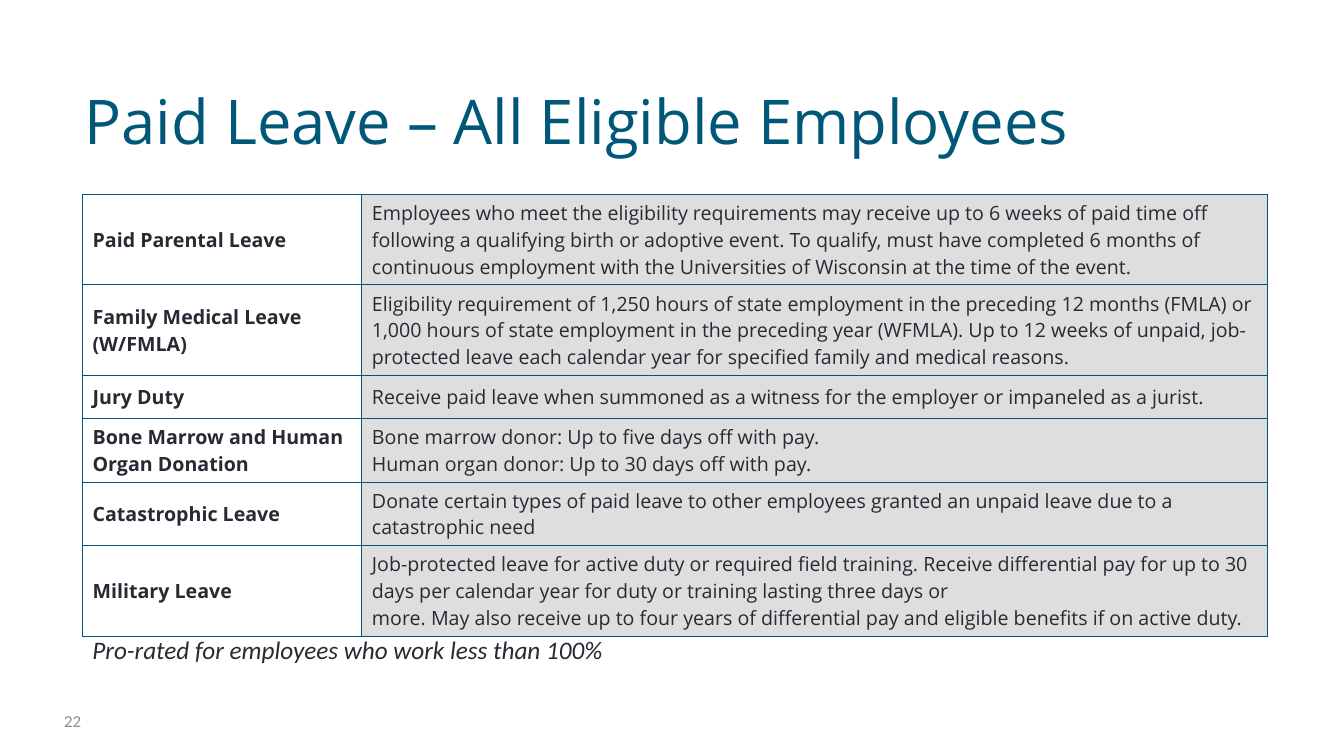
from lxml import etree
from pptx import Presentation
from pptx.dml.color import RGBColor
from pptx.enum import text as t
from pptx.oxml import ns
from pptx.util import Cm, Pt

TEAL, INK, PALE, MUTED = "005777", "292934", "DEDEDE", "8E8E90"

# name of the leave, its paragraphs, row height in cm
LEAVES = [
    ("Paid Parental Leave",
     ["Employees who meet the eligibility requirements may receive up to 6 weeks of paid time off "
      "following a qualifying birth or adoptive event. To qualify, must have completed 6 months of "
      "continuous employment with the Universities of Wisconsin at the time of the event."], 2.28),
    ("Family Medical Leave (W/FMLA)",
     ["Eligibility requirement of 1,250 hours of state employment in the preceding 12 months (FMLA) or "
      "1,000 hours of state employment in the preceding year (WFMLA). Up to 12 weeks of unpaid, "
      "job-protected leave each calendar year for specified family and medical reasons."], 2.28),
    ("Jury Duty",
     ["Receive paid leave when summoned as a witness for the employer or impaneled as a jurist."], 1.09),
    ("Bone Marrow and Human Organ Donation",
     ["Bone marrow donor: Up to five days off with pay.",
      "Human organ donor: Up to 30 days off with pay."], 1.6),
    ("Catastrophic Leave",
     ["Donate certain types of paid leave to other employees granted an unpaid leave due to a "
      "catastrophic need"], 1.6),
    ("Military Leave",
     ["Job-protected leave for active duty or required field training. Receive differential pay for "
      "up to 30 days per calendar year for duty or training lasting three days or",
      "more. May also receive up to four years of differential pay and eligible benefits if on "
      "active duty."], 2.28),
]


def color(value):
    return RGBColor.from_string(value)


def write(frame, *lines, size=14, face="Open Sans", ink=INK, bold=False, italic=False):
    for index, line in enumerate(lines):
        paragraph = frame.add_paragraph() if index else frame.paragraphs[0]
        paragraph.alignment = t.PP_ALIGN.LEFT
        run = paragraph.add_run()
        run.text = line
        font = run.font
        font.size, font.name, font.bold, font.italic = Pt(size), face, bold, italic
        font.color.rgb = color(ink)


def outline(cell):
    properties = cell._tc.get_or_add_tcPr()
    for position, side in enumerate(("a:lnL", "a:lnR", "a:lnT", "a:lnB")):
        border = etree.Element(ns.qn(side), w=str(Pt(1)))
        fill = etree.SubElement(border, ns.qn("a:solidFill"))
        etree.SubElement(fill, ns.qn("a:srgbClr"), val=TEAL)
        properties.insert(position, border)


def heading(slide, left, top, width, height):
    title = slide.shapes.title
    title.left, title.top, title.width, title.height = left, top, width, height
    frame = title.text_frame
    frame.auto_size = t.MSO_AUTO_SIZE.NONE
    frame.vertical_anchor = t.MSO_ANCHOR.BOTTOM
    frame.margin_bottom = 0
    write(frame, "Paid Leave – All Eligible Employees", size=44, ink=TEAL)


def leave_table(slide, left, top, width, name_width):
    height = Cm(sum(row_height for *_, row_height in LEAVES))
    table = slide.shapes.add_table(len(LEAVES), 2, left, top, width, height).table
    table.first_row = table.horz_banding = False
    table.columns[0].width, table.columns[1].width = name_width, width - name_width
    for row, (name, details, row_height) in zip(table.rows, LEAVES):
        row.height = Cm(row_height)
        name_cell, detail_cell = row.cells
        name_cell.fill.background()
        detail_cell.fill.solid()
        detail_cell.fill.fore_color.rgb = color(PALE)
        write(name_cell.text_frame, name, bold=True)
        write(detail_cell.text_frame, *details)
        for cell in row.cells:
            cell.vertical_anchor = t.MSO_ANCHOR.MIDDLE
            outline(cell)


def caption(slide, words, left, top, width, height, anchor=t.MSO_ANCHOR.TOP, **style):
    frame = slide.shapes.add_textbox(left, top, width, height).text_frame
    frame.word_wrap = True
    frame.vertical_anchor = anchor
    write(frame, words, face="Calibri", **style)


def main():
    deck = Presentation()
    deck.slide_width, deck.slide_height = Cm(33.87), Cm(19.05)
    slide = deck.slides.add_slide(deck.slide_layouts[5])

    heading(slide, Cm(1.88), Cm(0.76), Cm(30.33), Cm(3.18))
    leave_table(slide, Cm(2.08), Cm(4.9), Cm(29.87), Cm(7.04))

    # Note under the table and page number
    caption(slide, "Pro-rated for employees who work less than 100%",
            Cm(2.08), Cm(15.85), Cm(14), Cm(1.8), size=18, italic=True)
    caption(slide, "22", Cm(1.37), Cm(17.65), Cm(1.42), Cm(1.02),
            anchor=t.MSO_ANCHOR.MIDDLE, size=12, ink=MUTED)
    deck.save("out.pptx")


if __name__ == "__main__":
    main()
